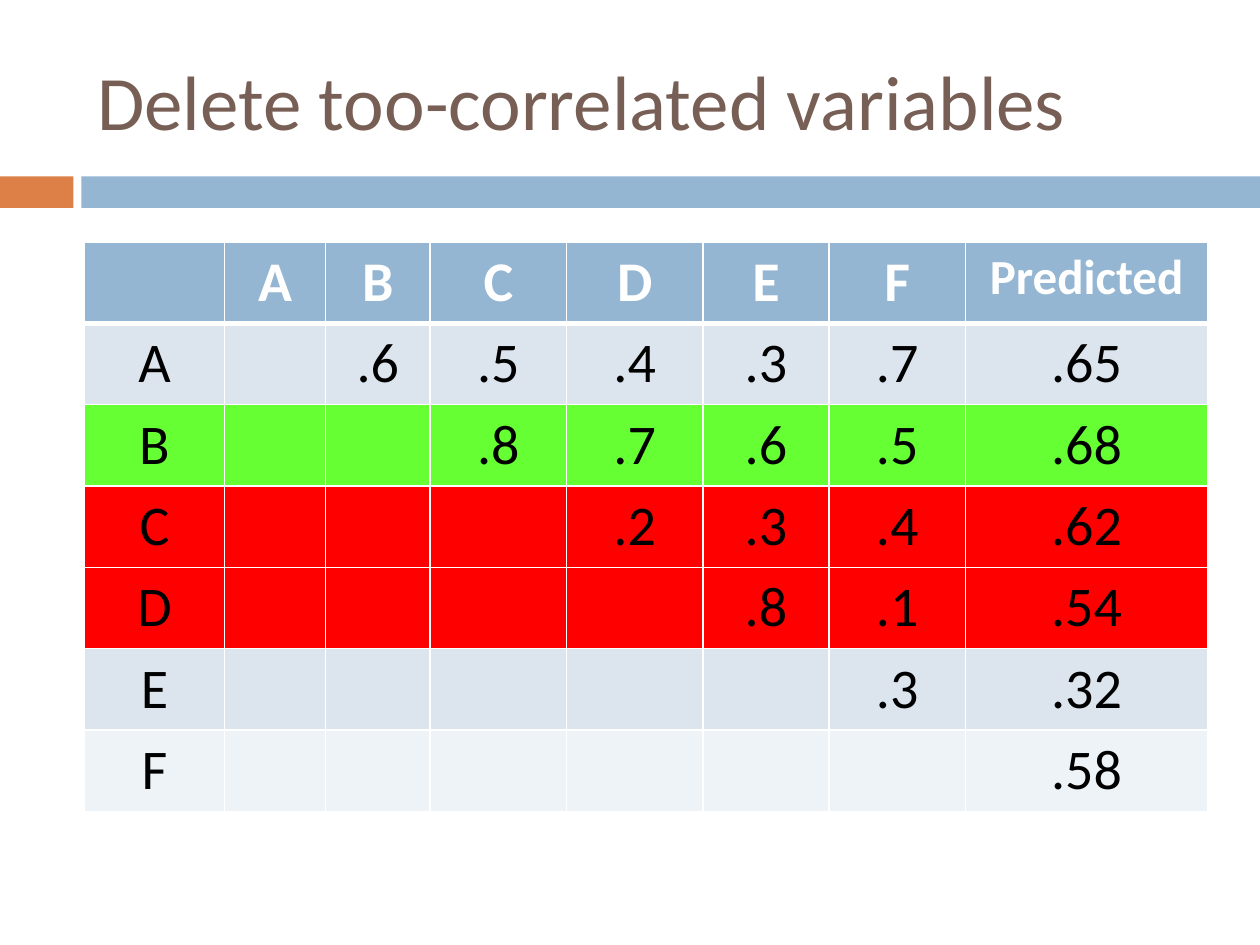
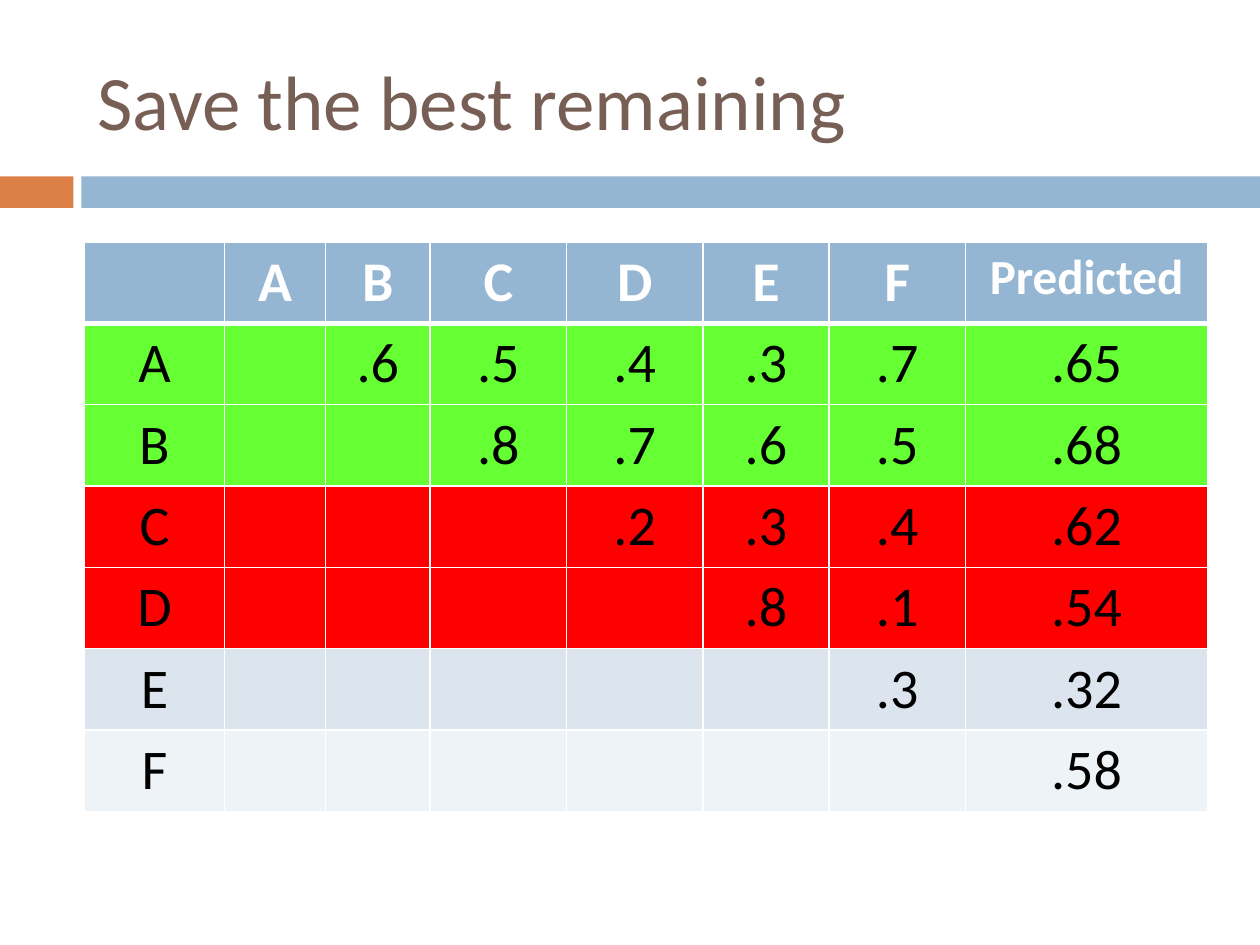
from lxml import etree
from pptx import Presentation
from pptx.dml.color import RGBColor
from pptx.enum.shapes import MSO_SHAPE
from pptx.enum.text import MSO_ANCHOR, PP_ALIGN
from pptx.oxml.ns import qn
from pptx.util import Pt

RECTANGLE = MSO_SHAPE.RECTANGLE
MIDDLE = MSO_ANCHOR.MIDDLE
LEFT, CENTER = PP_ALIGN.LEFT, PP_ALIGN.CENTER

FONT = "Calibri"
COLORS = {
    "title": "775F55",
    "accent": "DD8047",
    "header": "94B6D2",
    "band_dark": "DCE5EE",
    "band_light": "EEF3F7",
    "keep": "66FF33",
    "delete": "FF0000",
    "white": "FFFFFF",
    "black": "000000",
}

# Boxes: left, top, width, height in points
SLIDE_WIDTH, SLIDE_HEIGHT = 720, 540
TITLE_BOX = (48.24, 18, 642, 78)
BAND_BOX = (0, 100.8, SLIDE_WIDTH, 18)
TABLE_BOX = (48.24, 138.24, 642, 325.5)
ACCENT_WIDTH, BAND_START = 42, 46.5

COLUMN_WEIGHTS = [1.11, 0.8, 0.83, 1.08, 1.08, 1, 1.08, 1.92]
VARIABLES = "ABCDEF"
# Correlations with the later variables, then the predicted value
CORRELATIONS = [
    [".6", ".5", ".4", ".3", ".7", ".65"],
    [".8", ".7", ".6", ".5", ".68"],
    [".2", ".3", ".4", ".62"],
    [".8", ".1", ".54"],
    [".3", ".32"],
    [".58"],
]
SLIDES = [
    ("Delete too-correlated variables", {"B": "keep", "C": "delete", "D": "delete"}),
    ("Save the best remaining",
     {"A": "keep", "B": "keep", "C": "delete", "D": "delete"}),
]


def rgb(name):
    return RGBColor.from_string(COLORS[name])


def style_paragraph(paragraph, size, color, bold=False, alignment=CENTER):
    paragraph.alignment = alignment
    font = paragraph.font
    font.name, font.size, font.bold = FONT, Pt(size), bold
    font.color.rgb = rgb(color)


def add_title(slide, text, box):
    title = slide.shapes.title
    title.left, title.top, title.width, title.height = map(Pt, box)
    frame = title.text_frame
    frame.text = text
    frame.vertical_anchor = MIDDLE
    style_paragraph(frame.paragraphs[0], 44, "title", alignment=LEFT)


def add_bands(slide, box):
    left, top, width, height = box
    for offset, band_width, color in [
        (0, ACCENT_WIDTH, "accent"),
        (BAND_START, width - BAND_START, "header"),
    ]:
        band = slide.shapes.add_shape(
            RECTANGLE, Pt(left + offset), Pt(top), Pt(band_width), Pt(height))
        band.shadow.inherit = False
        band.fill.solid()
        band.fill.fore_color.rgb = rgb(color)
        band.line.fill.background()


def set_borders(cell, **widths):
    properties = cell._tc.get_or_add_tcPr()
    for side, width in widths.items():
        line = etree.SubElement(properties, qn(f"a:ln{side}"), w=str(Pt(width)))
        fill = etree.SubElement(line, qn("a:solidFill"))
        etree.SubElement(fill, qn("a:srgbClr"), val=COLORS["white"])


def fill_cell(cell, text, row, size, color):
    is_header = row == 0
    # Borders come before the fill in the cell properties
    set_borders(cell, L=1, R=1, T=3 if row == 1 else 1, B=3 if is_header else 1)
    cell.fill.solid()
    cell.fill.fore_color.rgb = rgb(color)
    cell.text = text
    style_paragraph(cell.text_frame.paragraphs[0], size,
                    "white" if is_header else "black", bold=is_header)


def add_correlation_table(slide, highlights, box):
    width, height = box[2:]
    rows = [["", *VARIABLES, "Predicted"]]
    for index, values in enumerate(CORRELATIONS):
        rows.append([VARIABLES[index], *[""] * (index + 1), *values])
    table = slide.shapes.add_table(
        len(rows), len(COLUMN_WEIGHTS), *map(Pt, box)).table
    table.horz_banding = False

    for column, weight in zip(table.columns, COLUMN_WEIGHTS):
        column.width = Pt(width * weight / sum(COLUMN_WEIGHTS))
    for row, texts in enumerate(rows):
        table.rows[row].height = Pt(height / len(rows))
        band = "band_dark" if row % 2 else "band_light"
        color = highlights.get(texts[0], band) if row else "header"
        for column, text in enumerate(texts):
            size = 28 if text == "Predicted" else 32
            fill_cell(table.cell(row, column), text, row, size, color)


def add_variable_slide(presentation, title, highlights):
    title_only = presentation.slide_layouts[5]
    slide = presentation.slides.add_slide(title_only)
    add_bands(slide, BAND_BOX)
    add_title(slide, title, TITLE_BOX)
    add_correlation_table(slide, highlights, TABLE_BOX)


def main():
    presentation = Presentation()
    presentation.slide_width = Pt(SLIDE_WIDTH)
    presentation.slide_height = Pt(SLIDE_HEIGHT)
    for title, highlights in SLIDES:
        add_variable_slide(presentation, title, highlights)
    presentation.save("out.pptx")


if __name__ == "__main__":
    main()
